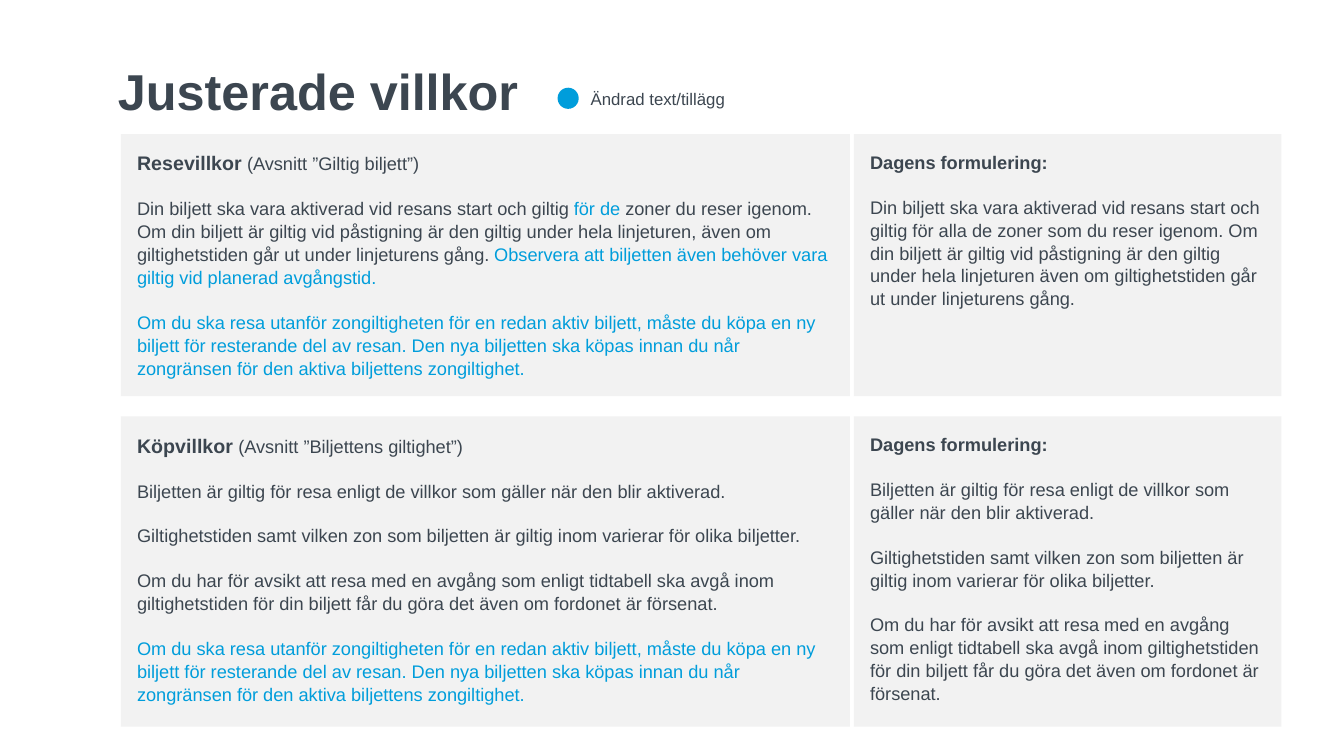
from pptx import Presentation
from pptx.dml.color import RGBColor
from pptx.enum.shapes import MSO_SHAPE
from pptx.enum.text import MSO_ANCHOR, MSO_AUTO_SIZE, PP_ALIGN
from pptx.util import Emu, Pt

RECTANGLE, OVAL = MSO_SHAPE.RECTANGLE, MSO_SHAPE.OVAL
TOP, LEFT = MSO_ANCHOR.TOP, PP_ALIGN.LEFT
GROW = MSO_AUTO_SIZE.SHAPE_TO_FIT_TEXT

DARK = RGBColor(0x3C, 0x46, 0x50)
BLUE = RGBColor(0x00, 0x9D, 0xDB)
GREY = RGBColor(0xF2, 0xF2, 0xF2)

FONT = "Arial"
BODY_SIZE = 13
LINE_SPACING = 1.05
PARA_GAP = 15.6

# Panel grid: (left, width) of columns and (top, height) of rows
TERMS_COLUMN, TODAY_COLUMN = (120, 723), (847, 424)
TRAVEL_ROW, PURCHASE_ROW = (133, 260), (413, 308)
PANEL_INSET = 16

# Panel wording
TODAY_HEADING = "Dagens formulering:"
VALIDITY = "Biljetten är giltig för resa enligt de villkor som gäller när den blir aktiverad."
ZONES = "Giltighetstiden samt vilken zon som biljetten är giltig inom varierar för olika biljetter."
DELAY = ("Om du har för avsikt att resa med en avgång som enligt tidtabell ska avgå inom "
         "giltighetstiden för din biljett får du göra det även om fordonet är försenat.")
OUTSIDE_ZONE = ("Om du ska resa utanför zongiltigheten för en redan aktiv biljett, måste du köpa "
                "en ny biljett för resterande del av resan. Den nya biljetten ska köpas innan du "
                "når zongränsen för den aktiva biljettens zongiltighet.")
TODAY_TRAVEL = ("Din biljett ska vara aktiverad vid resans start och giltig för alla de zoner som "
                "du reser igenom. Om din biljett är giltig vid påstigning är den giltig under hela "
                "linjeturen även om giltighetstiden går ut under linjeturens gång.")


def px(length):
    return Emu(length * 9144)


def span(text, color=DARK, size=BODY_SIZE, bold=False):
    return text, color, size, bold


def heading(title, section):
    return [span(title, size=14, bold=True), span(" " + section)]


def write_paragraphs(frame, paragraphs):
    for index, spans in enumerate(paragraphs):
        para = frame.add_paragraph() if index else frame.paragraphs[0]
        para.alignment = LEFT
        para.line_spacing = LINE_SPACING
        if index:
            para.space_before = Pt(PARA_GAP)
        for text, color, size, bold in spans:
            run = para.add_run()
            run.text = text
            run.font.name = FONT
            run.font.size = Pt(size)
            run.font.bold = bold
            run.font.color.rgb = color


def add_filled_shape(page, kind, left, top, width, height, color):
    shape = page.shapes.add_shape(kind, px(left), px(top), px(width), px(height))
    shape.shadow.inherit = False
    shape.fill.solid()
    shape.fill.fore_color.rgb = color
    shape.line.fill.background()
    return shape


def add_panel(page, column, row, paragraphs):
    left, width = column
    top, height = row
    frame = add_filled_shape(page, RECTANGLE, left, top, width, height, GREY).text_frame
    frame.word_wrap = True
    frame.vertical_anchor = TOP
    frame.margin_left = frame.margin_right = px(PANEL_INSET)
    frame.margin_top = frame.margin_bottom = px(PANEL_INSET)
    write_paragraphs(frame, paragraphs)


def add_label(page, left, top, width, height, content, wrap):
    box = page.shapes.add_textbox(px(left), px(top), px(width), px(height))
    box.text_frame.word_wrap = wrap
    box.text_frame.auto_size = GROW
    write_paragraphs(box.text_frame, [[content]])


def main():
    deck = Presentation()
    deck.slide_width, deck.slide_height = px(1333), px(750)
    page = deck.slides.add_slide(deck.slide_layouts[6])

    # Title and legend
    add_label(page, 107, 52, 570, 71, span("Justerade villkor", size=36, bold=True), True)
    add_filled_shape(page, OVAL, 553, 87, 21, 21, BLUE)
    add_label(page, 576, 82, 154, 30, span("Ändrad text/tillägg", size=12), False)

    # Adjusted terms
    add_panel(page, TERMS_COLUMN, TRAVEL_ROW, [
        heading("Resevillkor", "(Avsnitt ”Giltig biljett”)"),
        [span("Din biljett ska vara aktiverad vid resans start och giltig "),
         span("för de ", BLUE),
         span("zoner du reser igenom. Om din biljett är giltig vid påstigning är den giltig "
              "under hela linjeturen, även om giltighetstiden går ut under linjeturens gång. "),
         span("Observera att biljetten även behöver vara giltig vid planerad avgångstid.", BLUE)],
        [span(OUTSIDE_ZONE, BLUE)],
    ])
    add_panel(page, TERMS_COLUMN, PURCHASE_ROW, [
        heading("Köpvillkor", "(Avsnitt ”Biljettens giltighet”)"),
        [span(VALIDITY)], [span(ZONES)], [span(DELAY)], [span(OUTSIDE_ZONE, BLUE)],
    ])

    # Current wording
    today_rows = [(TRAVEL_ROW, [TODAY_TRAVEL]), (PURCHASE_ROW, [VALIDITY, ZONES, DELAY])]
    for row, texts in today_rows:
        add_panel(page, TODAY_COLUMN, row,
                  [[span(TODAY_HEADING, bold=True)]] + [[span(text)] for text in texts])

    deck.save("out.pptx")


if __name__ == "__main__":
    main()
